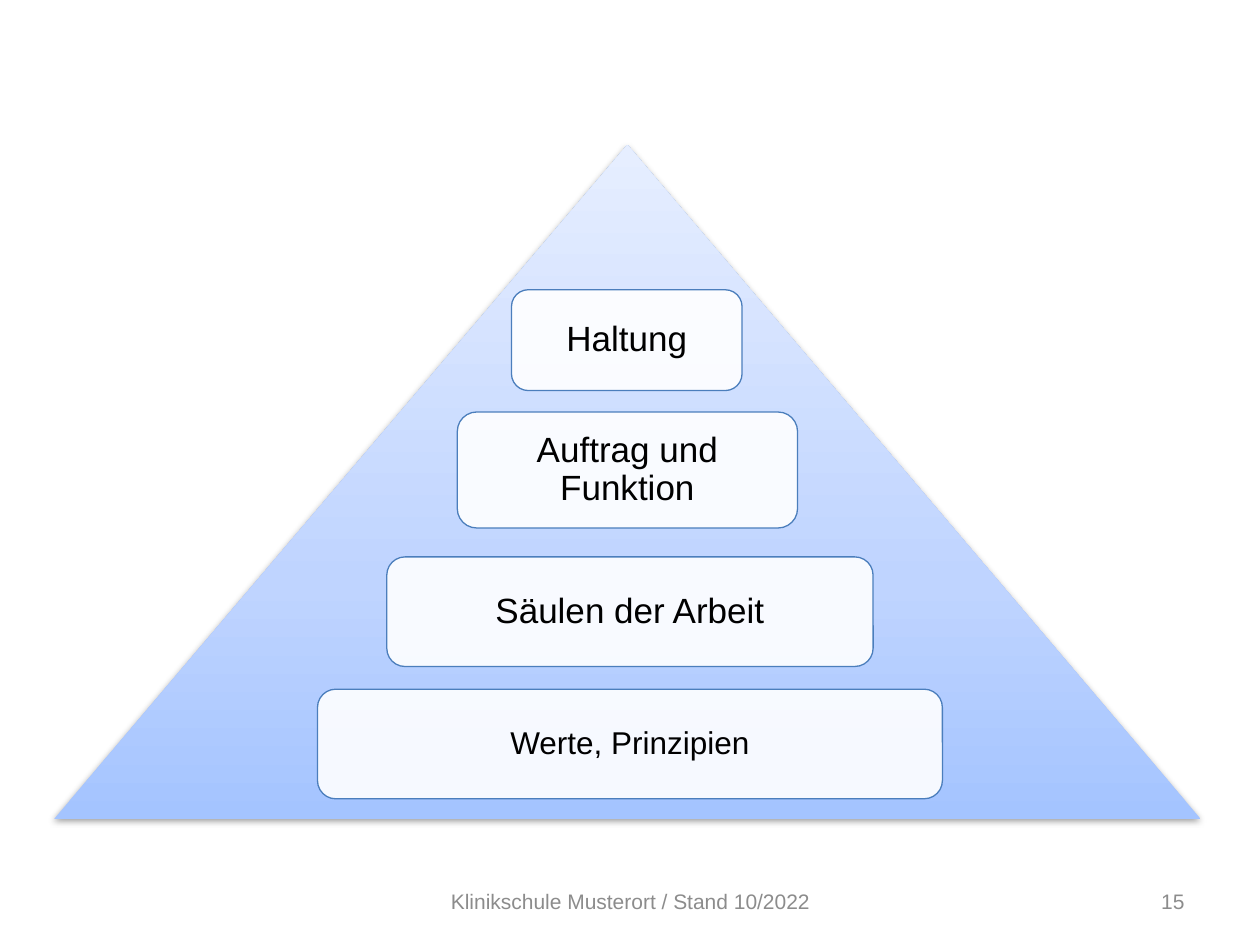
import copy

import pptx
import pptx.dml.color
import pptx.enum.shapes
import pptx.enum.text
import pptx.oxml
import pptx.oxml.ns
import pptx.util

COLUMNS, ROWS = 100, 75
CELL = pptx.util.Inches(0.1)
FONT = "Arial"
COLORS = {
    "base": "A4C4FF", "middle": "BFD4FF", "tip": "E6EEFF",
    "step": "FFFFFF", "outline": "4B7EBC",
    "text": "000000", "footer": "8C8C8C", "shadow": "000000",
}
# label, left, top, width, height (in cells from the pyramid's corner), size
STEPS = [
    ("Haltung", 36.3, 11.5, 18.3, 8, 20),
    ("Auftrag und Funktion", 32, 21.2, 27, 9.2, 20),
    ("Säulen der Arbeit", 26.4, 32.7, 38.6, 8.7, 20),
    ("Werte, Prinzipien", 20.9, 43.2, 49.6, 8.7, 18),
]
SHADOW = """<a:outerShdw xmlns:a="http://schemas.openxmlformats.org/drawingml/2006/main"
 blurRad="40000" dist="20000" dir="5400000" rotWithShape="0">
 <a:srgbClr val="%s"><a:alpha val="38000"/></a:srgbClr></a:outerShdw>"""


def rgb(name):
    return pptx.dml.color.RGBColor.from_string(COLORS[name])


def emu(box):
    """Turn a box in grid cells into slide lengths."""
    return [int(v * CELL) for v in box]


def write(s, text, size, color, align, inset):
    tf = s.text_frame
    tf.text = text
    tf.word_wrap = True
    tf.vertical_anchor = pptx.enum.text.MSO_ANCHOR.MIDDLE
    tf.margin_left = tf.margin_right = pptx.util.Inches(inset)
    tf.margin_top = tf.margin_bottom = pptx.util.Inches(inset / 2)
    p = tf.paragraphs[0]
    p.alignment = align
    font = p.runs[0].font
    font.name, font.size = FONT, pptx.util.Pt(size)
    font.color.rgb = rgb(color)
    return p


def add_triangle(slide, box):
    s = slide.shapes.add_shape(
        pptx.enum.shapes.MSO_SHAPE.ISOSCELES_TRIANGLE, *emu(box))
    s.fill.gradient()
    s.fill.gradient_angle = 90
    stops = s.fill.gradient_stops
    stop_list = s.element.spPr.find(".//" + pptx.oxml.ns.qn("a:gsLst"))
    stop_list.insert(1, copy.deepcopy(stop_list[0]))
    stops = s.fill.gradient_stops
    for stop, position, name in zip(
            stops, (0, 0.35, 1), ("base", "middle", "tip")):
        stop.position = position
        stop.color.rgb = rgb(name)
    s.line.fill.background()
    s.shadow.inherit = False
    effects = s.element.spPr.find(pptx.oxml.ns.qn("a:effectLst"))
    effects.append(pptx.oxml.parse_xml(SHADOW % COLORS["shadow"]))


def add_step(slide, box, label, size):
    s = slide.shapes.add_shape(
        pptx.enum.shapes.MSO_SHAPE.ROUNDED_RECTANGLE, *emu(box))
    s.shadow.inherit = False
    s.fill.solid()
    s.fill.fore_color.rgb = rgb("step")
    color = s.element.spPr.find(".//" + pptx.oxml.ns.qn("a:srgbClr"))
    alpha = color.makeelement(pptx.oxml.ns.qn("a:alpha"), {"val": "90000"})
    color.append(alpha)
    s.line.color.rgb = rgb("outline")
    s.line.width = pptx.util.Pt(0.75)
    p = write(s, label, size, "text", pptx.enum.text.PP_ALIGN.CENTER, 0.12)
    p.line_spacing = 0.9


def add_pyramid(slide, box):
    add_triangle(slide, box)
    left, top = box[:2]
    for label, x, y, width, height, size in STEPS:
        add_step(slide, (left + x, top + y, width, height), label, size)


def add_footer(slide, box):
    """Place the centred note and the page number at the right edge."""
    left, top, width, height = box
    align = pptx.enum.text.PP_ALIGN
    parts = [
        ("Klinikschule Musterort / Stand 10/2022", 29.2, 31.7, align.CENTER),
        ("15", width - 23.3, 23.3, align.RIGHT),
    ]
    for text, x, part_width, alignment in parts:
        s = slide.shapes.add_textbox(*emu((left + x, top, part_width, height)))
        write(s, text, 12, "footer", alignment, 0.1)


def main():
    prs = pptx.Presentation()
    prs.slide_width, prs.slide_height = COLUMNS * CELL, ROWS * CELL
    slide = prs.slides.add_slide(prs.slide_layouts[6])
    add_pyramid(slide, (4.3, 11.5, 91, 53.5))
    add_footer(slide, (5, 69.5, 90, 4))
    prs.save("out.pptx")


if __name__ == "__main__":
    main()
